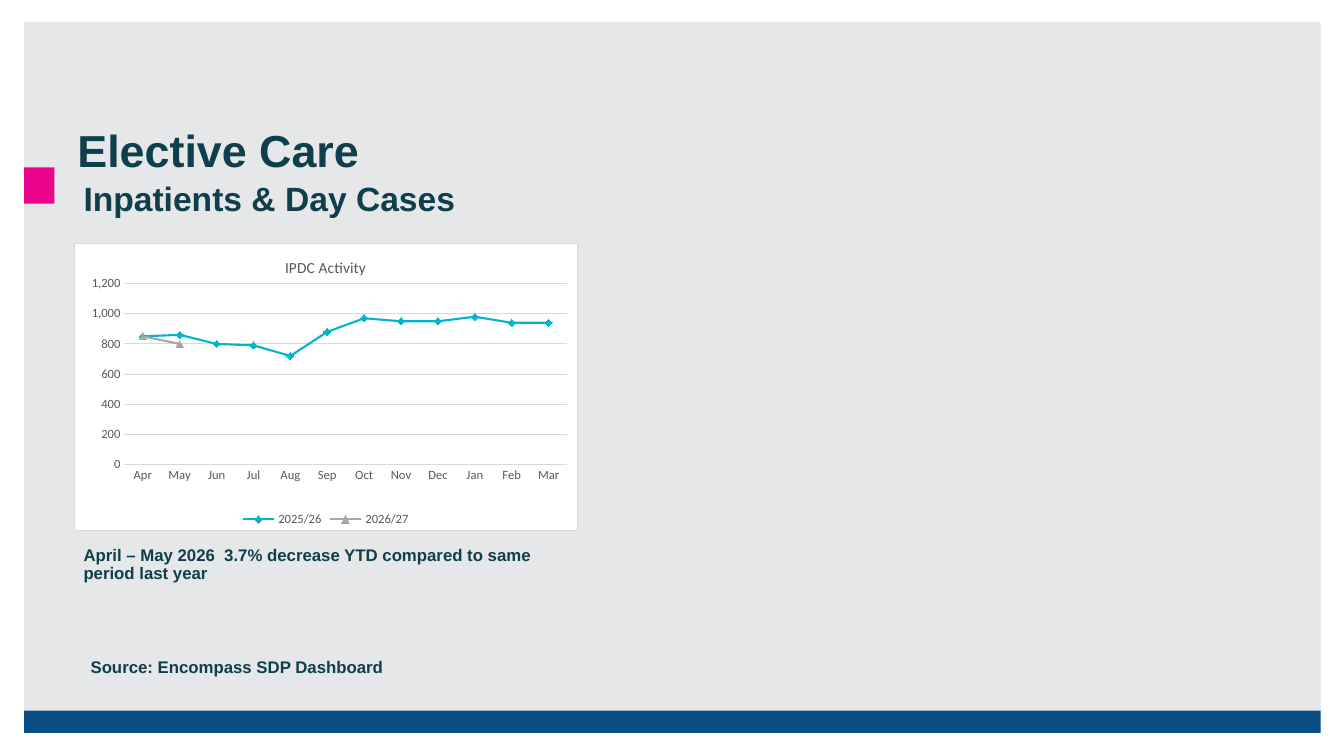
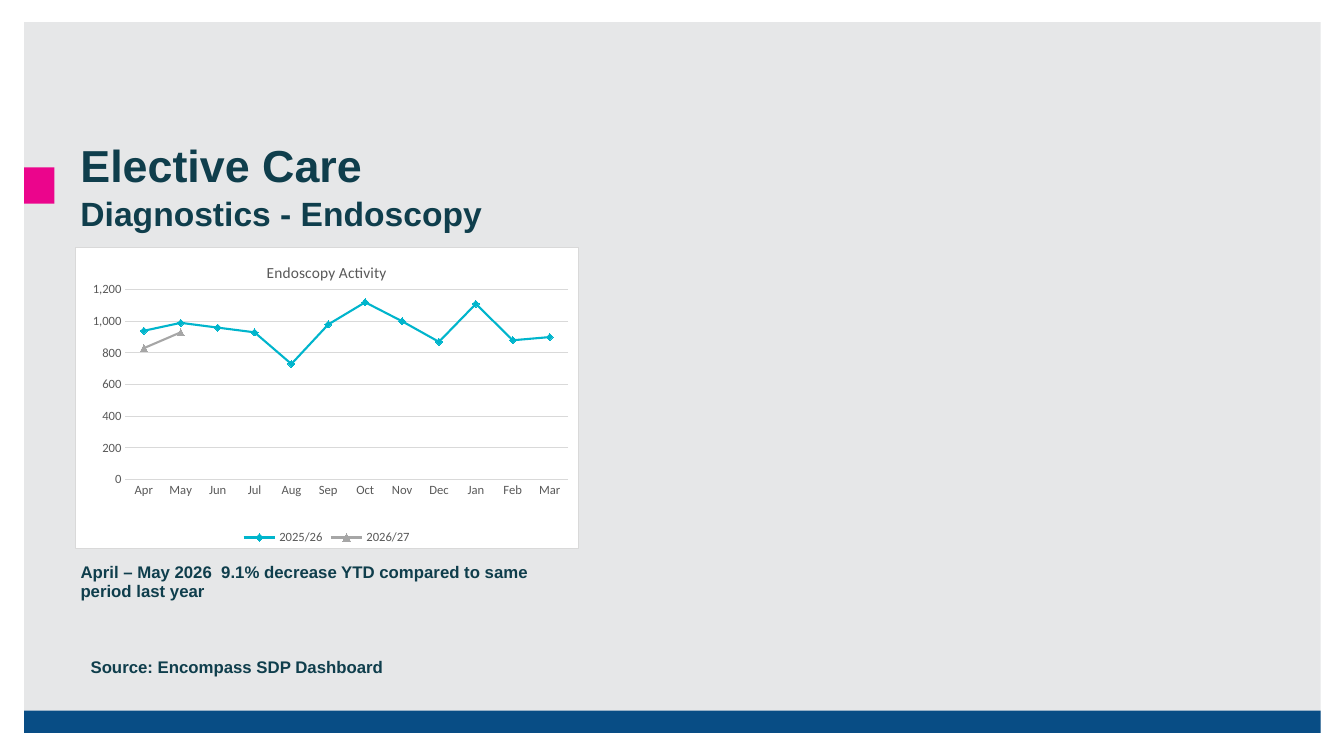
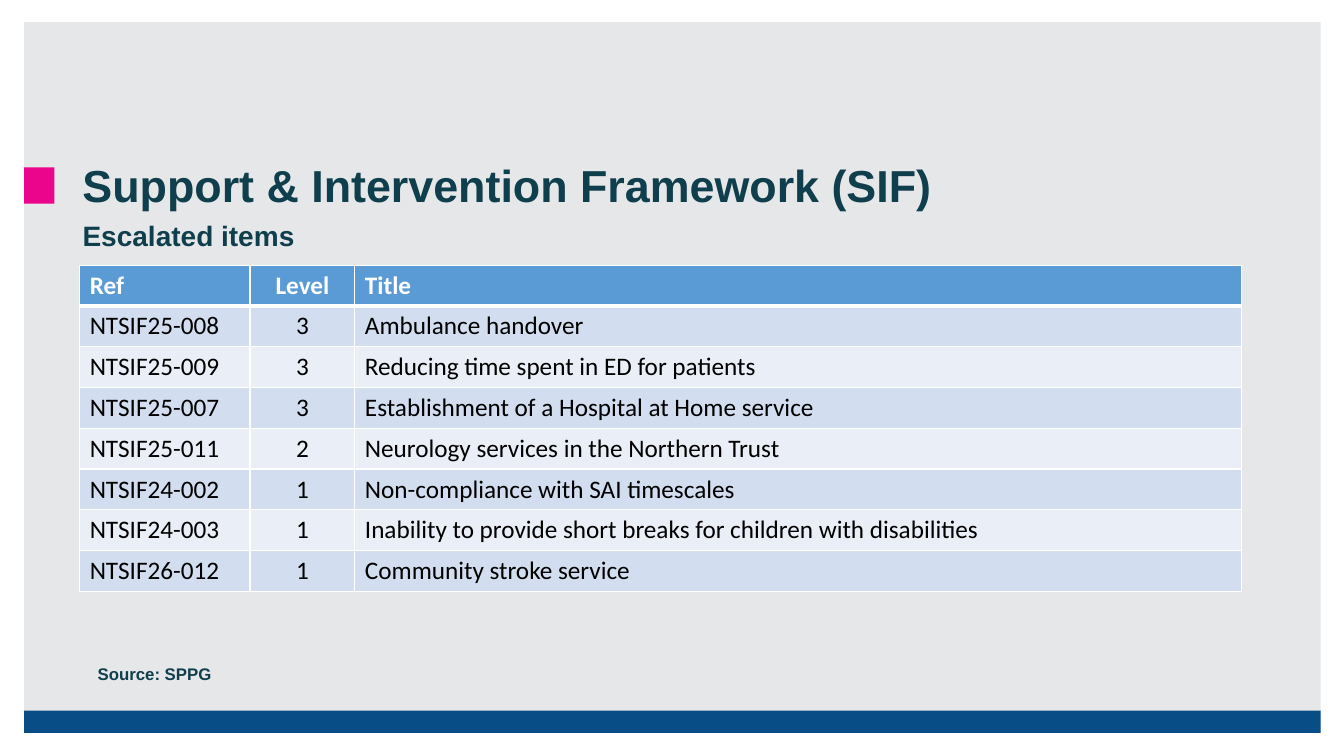
from dataclasses import dataclass

from lxml import etree
from pptx import Presentation
from pptx import util as u
from pptx.chart.chart import Chart
from pptx.chart.data import CategoryChartData
from pptx.dml.color import RGBColor
from pptx.enum import chart as charts, shapes, text
from pptx.oxml import parse_xml
from pptx.oxml.ns import nsdecls, qn
from pptx.slide import Slide
from pptx.table import _Cell as Cell

PX = 9144  # EMU in one px, 100 px to the inch

WHITE = RGBColor(0xFF, 0xFF, 0xFF)
BLACK = RGBColor(0x00, 0x00, 0x00)
PANEL = RGBColor(0xE6, 0xE7, 0xE8)
BAND = RGBColor(0x08, 0x4D, 0x85)
ACCENT = RGBColor(0xEB, 0x05, 0x8C)
INK = RGBColor(0x0F, 0x3E, 0x4C)
CHART_TEXT = RGBColor(0x59, 0x59, 0x59)
CHART_LINE = RGBColor(0xD9, 0xD9, 0xD9)
TEAL = RGBColor(0x00, 0xB5, 0xCC)
GREY = RGBColor(0xA6, 0xA6, 0xA6)
HEADER_FILL = RGBColor(0x5B, 0x9B, 0xD5)
ROW_FILLS = (RGBColor(0xD2, 0xDE, 0xEF), RGBColor(0xEA, 0xEF, 0xF7))

HEADING_FONT = "Arial"
BODY_FONT = "Calibri"
MONTHS = ("Apr", "May", "Jun", "Jul", "Aug", "Sep",
          "Oct", "Nov", "Dec", "Jan", "Feb", "Mar")


@dataclass(frozen=True)
class Box:
    left: int
    top: int
    width: int
    height: int

    def emu(self) -> tuple[int, ...]:
        return tuple(value * PX for value in
                     (self.left, self.top, self.width, self.height))


@dataclass(frozen=True)
class Label:
    words: str
    box: Box
    size: int = 12


@dataclass(frozen=True)
class YearStyle:
    name: str
    color: RGBColor
    marker: charts.XL_MARKER_STYLE


@dataclass(frozen=True)
class ActivityChart:
    title: str
    box: Box
    last_year: tuple[int, ...]
    this_year: tuple[int, ...]


@dataclass(frozen=True)
class ActivitySlide:
    labels: tuple[Label, ...]
    chart: ActivityChart


FRAME = (
    (Box(24, 22, 1286, 705), PANEL),
    (Box(24, 705, 1286, 22), BAND),
    (Box(24, 166, 30, 36), ACCENT),
)
YEARS = (
    YearStyle("2025/26", TEAL, charts.XL_MARKER_STYLE.DIAMOND),
    YearStyle("2026/27", GREY, charts.XL_MARKER_STYLE.TRIANGLE),
)
DASHBOARD_SOURCE = Label("Source: Encompass SDP Dashboard", Box(80, 649, 578, 28))

ACTIVITY_SLIDES = (
    ActivitySlide(
        (
            Label("Elective Care", Box(67, 123, 512, 61), 32),
            Label("Inpatients & Day Cases", Box(73, 176, 471, 47), 24),
            Label("April – May 2026  3.7% decrease YTD compared to same period last year",
                  Box(73, 538, 509, 28)),
            DASHBOARD_SOURCE,
        ),
        ActivityChart(
            "IPDC Activity", Box(73, 241, 500, 286),
            (850, 860, 800, 790, 720, 880, 970, 950, 950, 980, 940, 940),
            (850, 800),
        ),
    ),
    ActivitySlide(
        (
            Label("Elective Care", Box(70, 138, 504, 61), 32),
            Label("Diagnostics - Endoscopy", Box(70, 191, 550, 47), 24),
            Label("April – May 2026  9.1% decrease YTD compared to same period last year",
                  Box(70, 555, 509, 28)),
            DASHBOARD_SOURCE,
        ),
        ActivityChart(
            "Endoscopy Activity", Box(74, 245, 500, 300),
            (940, 990, 960, 930, 730, 980, 1120, 1000, 870, 1110, 880, 900),
            (830, 930),
        ),
    ),
)

FRAMEWORK_LABELS = (
    Label("Support & Intervention Framework (SIF)", Box(72, 158, 994, 61), 32),
    Label("Escalated items", Box(72, 216, 858, 47), 20),
    Label("Source: SPPG", Box(87, 656, 578, 28)),
)
ITEMS_BOX = Box(79, 263, 1152, 324)
ITEM_COLUMNS = (169, 104, 879)
LEVEL_COLUMN = 1
ITEMS = (
    ("Ref", "Level", "Title"),
    ("NTSIF25-008", "3", "Ambulance handover"),
    ("NTSIF25-009", "3", "Reducing time spent in ED for patients"),
    ("NTSIF25-007", "3", "Establishment of a Hospital at Home service"),
    ("NTSIF25-011", "2", "Neurology services in the Northern Trust"),
    ("NTSIF24-002", "1", "Non-compliance with SAI timescales"),
    ("NTSIF24-003", "1", "Inability to provide short breaks for children with disabilities"),
    ("NTSIF26-012", "1", "Community stroke service"),
)


def style_font(font, name: str, size: int, color: RGBColor, bold: bool = False) -> None:
    font.name = name
    font.size = u.Pt(size)
    font.bold = bold
    font.color.rgb = color


def add_label(slide: Slide, label: Label) -> None:
    frame = slide.shapes.add_textbox(*label.box.emu()).text_frame
    frame.word_wrap = True
    paragraph = frame.paragraphs[0]
    paragraph.line_spacing = 0.9
    run = paragraph.add_run()
    run.text = label.words
    style_font(run.font, HEADING_FONT, label.size, INK, bold=True)


def add_framed_slide(presentation, labels: tuple[Label, ...]) -> Slide:
    """Add a blank slide with the shared panel, band and accent, then its labels."""
    slide = presentation.slides.add_slide(presentation.slide_layouts[6])
    for box, color in FRAME:
        shape = slide.shapes.add_shape(shapes.MSO_SHAPE.RECTANGLE, *box.emu())
        shape.shadow.inherit = False
        shape.fill.solid()
        shape.fill.fore_color.rgb = color
        shape.line.fill.background()
    for label in labels:
        add_label(slide, label)
    return slide


def set_chart_frame(chart: Chart) -> None:
    """Give the chart a white bordered area, square corners and a fixed plot area."""
    space = chart.element
    area = space.find(qn("c:chart"))
    area.addnext(parse_xml(
        f'<c:spPr {nsdecls("c", "a")}>'
        f'<a:solidFill><a:srgbClr val="{WHITE}"/></a:solidFill>'
        f'<a:ln w="{u.Pt(0.75)}"><a:solidFill><a:srgbClr val="{CHART_LINE}"/>'
        '</a:solidFill></a:ln></c:spPr>'))
    if space.find(qn("c:roundedCorners")) is None:
        space.find(qn("c:date1904")).addnext(
            parse_xml(f'<c:roundedCorners {nsdecls("c")} val="0"/>'))

    plot_area = area.find(qn("c:plotArea"))
    for old_layout in plot_area.findall(qn("c:layout")):
        plot_area.remove(old_layout)
    layout = etree.Element(qn("c:layout"))
    manual = etree.SubElement(layout, qn("c:manualLayout"))
    settings = {"layoutTarget": "inner", "xMode": "edge", "yMode": "edge",
                "x": "0.1", "y": "0.14", "w": "0.88", "h": "0.63"}
    for name, value in settings.items():
        etree.SubElement(manual, qn(f"c:{name}")).set("val", value)
    plot_area.insert(0, layout)


def style_axes(chart: Chart) -> None:
    for axis in (chart.category_axis, chart.value_axis):
        axis.major_tick_mark = charts.XL_TICK_MARK.NONE
        axis.minor_tick_mark = charts.XL_TICK_MARK.NONE
        style_font(axis.tick_labels.font, BODY_FONT, 9, CHART_TEXT)
    values = chart.value_axis
    values.minimum_scale = 0
    values.maximum_scale = 1200
    values.major_unit = 200
    values.tick_labels.number_format = "#,##0"
    values.tick_labels.number_format_is_linked = False
    values.format.line.fill.background()
    for line in (chart.category_axis.format.line, values.major_gridlines.format.line):
        line.color.rgb = CHART_LINE
        line.width = u.Pt(0.75)


def style_series(chart: Chart) -> None:
    chart.plots[0].vary_by_categories = False
    for series, year in zip(chart.plots[0].series, YEARS):
        series.smooth = False
        series.format.line.color.rgb = year.color
        series.format.line.width = u.Pt(1.5)
        marker = series.marker
        marker.style = year.marker
        marker.size = 5
        marker.format.fill.solid()
        marker.format.fill.fore_color.rgb = year.color
        marker.format.line.color.rgb = year.color
        marker.format.line.width = u.Pt(0.75)


def add_activity_chart(slide: Slide, activity: ActivityChart) -> None:
    data = CategoryChartData(number_format="#,##0")
    data.categories = MONTHS
    for year, values in zip(YEARS, (activity.last_year, activity.this_year)):
        missing = (None,) * (len(MONTHS) - len(values))
        data.add_series(year.name, values + missing)
    chart = slide.shapes.add_chart(
        charts.XL_CHART_TYPE.LINE_MARKERS, *activity.box.emu(), data).chart
    style_font(chart.font, BODY_FONT, 10, BLACK)

    chart.has_title = True
    run = chart.chart_title.text_frame.paragraphs[0].add_run()
    run.text = activity.title
    style_font(run.font, BODY_FONT, 11, CHART_TEXT)
    chart.chart_title.include_in_layout = False

    chart.has_legend = True
    chart.legend.position = charts.XL_LEGEND_POSITION.BOTTOM
    chart.legend.include_in_layout = False
    style_font(chart.legend.font, BODY_FONT, 9, CHART_TEXT)

    style_axes(chart)
    style_series(chart)
    set_chart_frame(chart)


def set_borders(cell: Cell, top: int, bottom: int) -> None:
    """Draw white cell borders; top and bottom widths are in points."""
    properties = cell._tc.get_or_add_tcPr()
    widths = {"lnL": 1, "lnR": 1, "lnT": top, "lnB": bottom}
    for position, (side, width) in enumerate(widths.items()):
        properties.insert(position, parse_xml(
            f'<a:{side} {nsdecls("a")} w="{u.Pt(width)}"><a:solidFill>'
            f'<a:srgbClr val="{WHITE}"/></a:solidFill></a:{side}>'))


def add_items_table(slide: Slide) -> None:
    table = slide.shapes.add_table(
        len(ITEMS), len(ITEM_COLUMNS), *ITEMS_BOX.emu()).table
    for column, width in zip(table.columns, ITEM_COLUMNS):
        column.width = width * PX
    for row, item in enumerate(ITEMS):
        is_header = row == 0
        for column, words in enumerate(item):
            cell = table.cell(row, column)
            cell.fill.solid()
            cell.fill.fore_color.rgb = HEADER_FILL if is_header else ROW_FILLS[(row - 1) % 2]
            set_borders(cell, top=3 if row == 1 else 1, bottom=3 if is_header else 1)
            paragraph = cell.text_frame.paragraphs[0]
            if column == LEVEL_COLUMN:
                paragraph.alignment = text.PP_ALIGN.CENTER
            run = paragraph.add_run()
            run.text = words
            style_font(run.font, BODY_FONT, 18, WHITE if is_header else BLACK, is_header)


def main() -> None:
    presentation = Presentation()
    presentation.slide_width = 1333 * PX
    presentation.slide_height = 750 * PX
    for activity in ACTIVITY_SLIDES:
        slide = add_framed_slide(presentation, activity.labels)
        add_activity_chart(slide, activity.chart)
    add_items_table(add_framed_slide(presentation, FRAMEWORK_LABELS))
    presentation.save("out.pptx")


if __name__ == "__main__":
    main()
